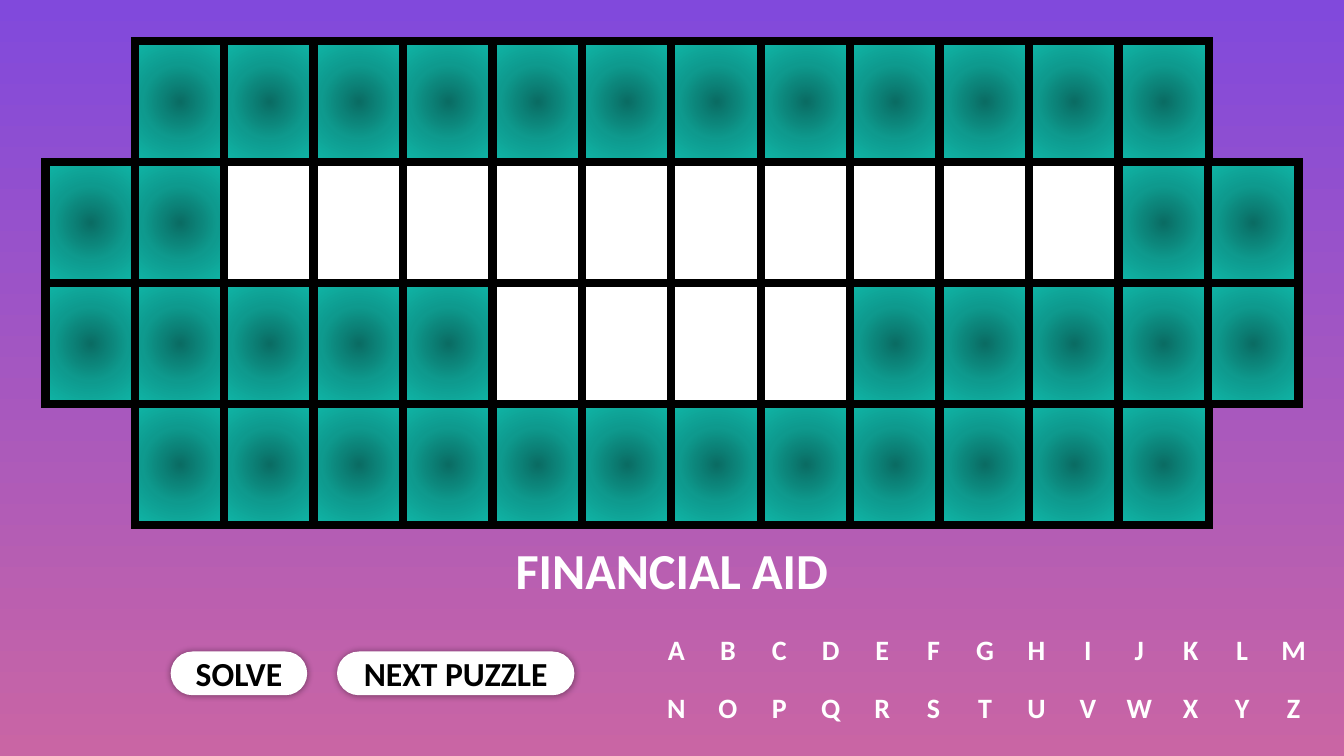
from lxml import etree
from pptx import Presentation
from pptx.dml.color import RGBColor
from pptx.enum.shapes import MSO_SHAPE
from pptx.enum.text import MSO_ANCHOR, PP_ALIGN
from pptx.oxml import parse_xml
from pptx.oxml.ns import nsdecls, qn
from pptx.util import Inches, Pt

RECTANGLE = MSO_SHAPE.RECTANGLE
PILL = MSO_SHAPE.ROUNDED_RECTANGLE
MIDDLE = MSO_ANCHOR.MIDDLE
CENTER = PP_ALIGN.CENTER

BLACK = RGBColor(0x00, 0x00, 0x00)
WHITE = RGBColor(0xFF, 0xFF, 0xFF)
VIOLET = RGBColor(0x81, 0x49, 0xDC)
PINK = RGBColor(0xC9, 0x65, 0xA4)
DARK_TEAL = RGBColor(0x0A, 0x6C, 0x63)
TEAL = RGBColor(0x0E, 0x9A, 0x8E)
LIGHT_TEAL = RGBColor(0x10, 0xB7, 0xA8)

TITLE = "FINANCIAL AID"
BOARD = [
    " TTTTTTTTTTTT ",
    "TTWWWWWWWWWWTT",
    "TTTTTWWWWTTTTT",
    " TTTTTTTTTTTT ",
]
ALPHABET = ["ABCDEFGHIJKLM", "NOPQRSTUVWXYZ"]
BUTTONS = [("SOLVE", 1.7, 1.34), ("NEXT PUZZLE", 3.35, 2.34)]
TEAL_STOPS = [(0, DARK_TEAL), (50, TEAL), (100, LIGHT_TEAL)]

BOARD_LEFT, BOARD_TOP = 0.45, 0.41
TILE_WIDTH, TILE_HEIGHT = 0.9, 1.2
TILE_PITCH = (11.98 - BOARD_LEFT) / 13
LETTER_LEFT, LETTER_TOP = 6.51, 6.13
LETTER_WIDTH, LETTER_HEIGHT = 0.4, 0.62
LETTER_PITCH, LETTER_ROW_PITCH = 0.51, 0.58
BUTTON_TOP, BUTTON_HEIGHT = 6.47, 0.42


def set_text(shape, text, size, color):
    """Write centred bold text without inner margins."""
    frame = shape.text_frame
    frame.text = text
    frame.word_wrap = True
    frame.vertical_anchor = MIDDLE
    frame.margin_left = frame.margin_right = 0
    frame.margin_top = frame.margin_bottom = 0
    para = frame.paragraphs[0]
    para.alignment = CENTER
    font = para.runs[0].font
    font.name, font.size, font.bold = "Calibri", Pt(size), True
    font.color.rgb = color


def fill_radial(shape, stops):
    """Fill a shape with a gradient spreading from its centre."""
    stop_xml = "".join(
        f'<a:gs pos="{position * 1000}"><a:srgbClr val="{color}"/></a:gs>'
        for position, color in stops
    )
    gradient = parse_xml(
        f'<a:gradFill {nsdecls("a")} rotWithShape="1"><a:gsLst>{stop_xml}</a:gsLst>'
        '<a:path path="circle"><a:fillToRect l="50000" t="50000" r="50000" b="50000"/>'
        "</a:path></a:gradFill>"
    )
    shape._element.spPr.find(qn("a:prstGeom")).addnext(gradient)


def add_tile(page, left, top, kind):
    """Add one board tile, white for a letter space and teal otherwise."""
    tile = page.shapes.add_shape(
        RECTANGLE, Inches(left), Inches(top), Inches(TILE_WIDTH), Inches(TILE_HEIGHT)
    )
    tile.shadow.inherit = False
    if kind == "W":
        tile.fill.solid()
        tile.fill.fore_color.rgb = WHITE
    else:
        fill_radial(tile, TEAL_STOPS)
    tile.line.color.rgb = BLACK
    tile.line.width = Pt(6)
    outline = tile._element.spPr.find(qn("a:ln"))
    etree.SubElement(outline, qn("a:miter"), lim="800000")


def add_button(page, label, left, width):
    """Add a white pill button with a soft glow of shadow."""
    button = page.shapes.add_shape(
        PILL, Inches(left), Inches(BUTTON_TOP), Inches(width), Inches(BUTTON_HEIGHT)
    )
    button.adjustments[0] = 0.5
    button.fill.solid()
    button.fill.fore_color.rgb = WHITE
    button.line.color.rgb = WHITE
    button.line.width = Pt(1)
    button.shadow.inherit = False
    button._element.spPr.find(qn("a:effectLst")).append(parse_xml(
        f'<a:outerShdw {nsdecls("a")} blurRad="{Pt(5)}" dist="0" dir="0" algn="ctr" '
        f'rotWithShape="0"><a:srgbClr val="{BLACK}"><a:alpha val="40000"/></a:srgbClr>'
        "</a:outerShdw>"
    ))
    set_text(button, label, 24, BLACK)


def main():
    """Build the puzzle board slide."""
    deck = Presentation()
    deck.slide_width, deck.slide_height = Inches(13.33), Inches(7.5)
    page = deck.slides.add_slide(deck.slide_layouts[5])

    backdrop = page.background.fill
    backdrop.gradient()
    backdrop.gradient_angle = 270
    for stop, color in zip(backdrop.gradient_stops, (VIOLET, PINK)):
        stop.color.rgb = color

    for row, kinds in enumerate(BOARD):
        for column, kind in enumerate(kinds):
            if kind != " ":
                add_tile(page, BOARD_LEFT + column * TILE_PITCH,
                         BOARD_TOP + row * TILE_HEIGHT, kind)

    title = page.shapes.title
    title.left, title.top = 0, Inches(5.34)
    title.width, title.height = deck.slide_width, Inches(0.62)
    set_text(title, TITLE, 36, WHITE)

    for label, left, width in BUTTONS:
        add_button(page, label, left, width)

    for row, letters in enumerate(ALPHABET):
        for column, letter in enumerate(letters):
            box = page.shapes.add_textbox(
                Inches(LETTER_LEFT + column * LETTER_PITCH),
                Inches(LETTER_TOP + row * LETTER_ROW_PITCH),
                Inches(LETTER_WIDTH), Inches(LETTER_HEIGHT),
            )
            set_text(box, letter, 20, WHITE)

    deck.save("out.pptx")


if __name__ == "__main__":
    main()
